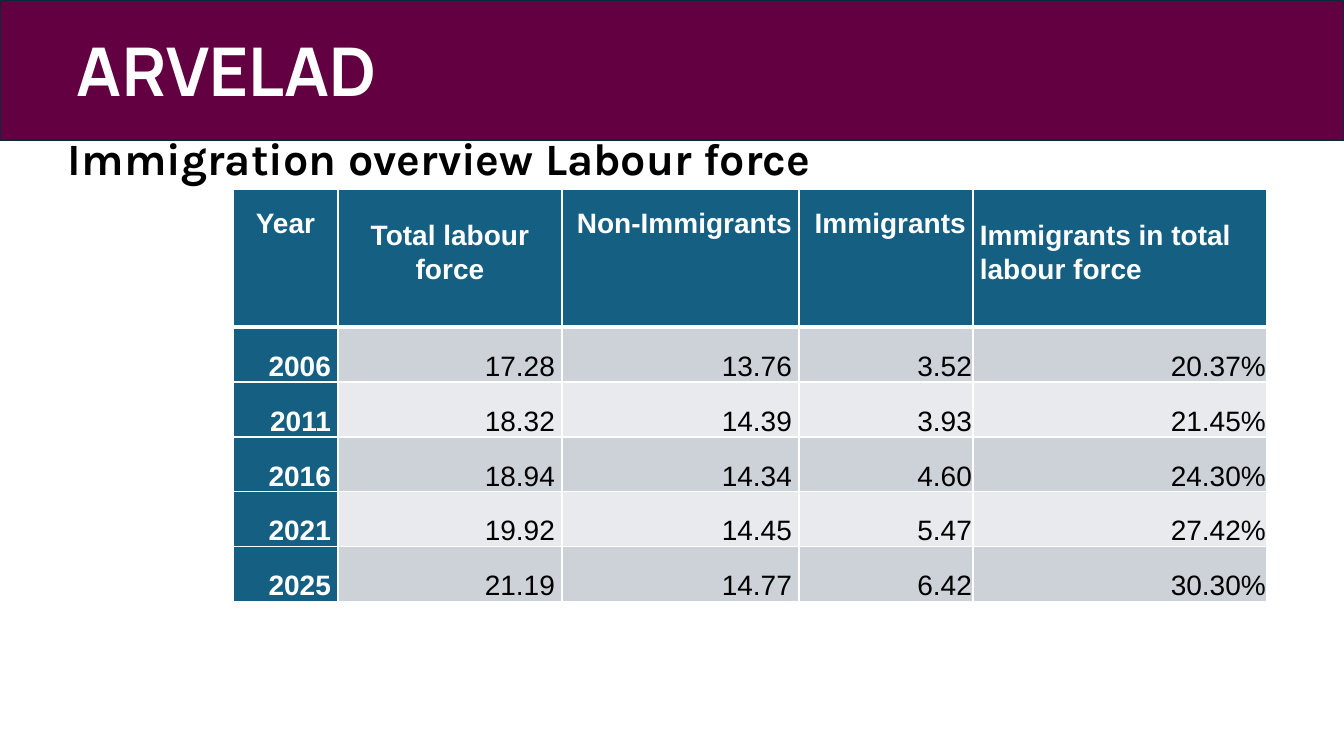
import pptx
import pptx.dml.color
import pptx.enum.shapes
import pptx.enum.text
import pptx.oxml
import pptx.oxml.ns
import pptx.util

PX = 914400 / 100.8
ANCHOR = pptx.enum.text.MSO_ANCHOR
ALIGN = pptx.enum.text.PP_ALIGN

WHITE, BLACK = "FFFFFF", "000000"
PLUM, NAVY, TEAL = "630041", "092A39", "156082"
BANDS = ("CCD2D8", "E8EAED")

COLUMN_WIDTHS = (105, 224, 237, 174, 294)
HEADER_HEIGHT, ROW_HEIGHT = 138, 55
# Label, alignment, gap below the text
HEADERS = (
    ("Year", ALIGN.CENTER, 88),
    ("Total labour force", ALIGN.CENTER, 42),
    ("Non-Immigrants", ALIGN.RIGHT, 88),
    ("Immigrants", ALIGN.RIGHT, 88),
    ("Immigrants in total labour force", ALIGN.LEFT, 42),
)
ROWS = (
    ("2006", "17.28", "13.76", "3.52", "20.37%"),
    ("2011", "18.32", "14.39", "3.93", "21.45%"),
    ("2016", "18.94", "14.34", "4.60", "24.30%"),
    ("2021", "19.92", "14.45", "5.47", "27.42%"),
    ("2025", "21.19", "14.77", "6.42", "30.30%"),
)


def px(length):
    return pptx.util.Emu(round(length * PX))


def color(value):
    return pptx.dml.color.RGBColor.from_string(value)


def format_text(paragraph, font_name, size, text_color, bold=True, align=ALIGN.LEFT):
    paragraph.alignment = align
    for run in paragraph.runs:
        run.font.name = font_name
        run.font.size = pptx.util.Pt(size)
        run.font.bold = bold
        run.font.color.rgb = color(text_color)


def add_banner(slide, left, top, width, height):
    shape = slide.shapes.add_shape(
        pptx.enum.shapes.MSO_SHAPE.RECTANGLE, px(left), px(top), px(width), px(height))
    shape.shadow.inherit = False
    shape.fill.solid()
    shape.fill.fore_color.rgb = color(PLUM)
    shape.line.color.rgb = color(NAVY)
    shape.line.width = pptx.util.Pt(1.5)
    text_frame = shape.text_frame
    text_frame.text = "ARVELAD"
    text_frame.vertical_anchor = ANCHOR.MIDDLE
    text_frame.margin_left = px(77)
    format_text(text_frame.paragraphs[0], "Manrope", 48, WHITE)


def add_title(slide, left, top, width, height):
    text_frame = slide.shapes.add_textbox(
        px(left), px(top), px(width), px(height)).text_frame
    text_frame.word_wrap = True
    text_frame.vertical_anchor = ANCHOR.MIDDLE
    text_frame.text = "Immigration overview Labour force"
    paragraph = text_frame.paragraphs[0]
    paragraph.line_spacing = 0.9
    format_text(paragraph, "Karla", 32, BLACK)


def set_borders(cell, top_width, bottom_width):
    """Draw white borders, 1 pt wide at the sides."""
    properties = cell._tc.get_or_add_tcPr()
    widths = {"L": 1, "R": 1, "T": top_width, "B": bottom_width}
    for index, (side, width) in enumerate(widths.items()):
        properties.insert(index, pptx.oxml.parse_xml(
            f'<a:ln{side} {pptx.oxml.ns.nsdecls("a")} w="{pptx.util.Pt(width)}">'
            f'<a:solidFill><a:srgbClr val="{WHITE}"/></a:solidFill></a:ln{side}>'))


def fill_cell(cell, text, fill, text_color, bold, align, gap_below=0, tight=False):
    """Write one cell; a tight cell has narrow insets and plain spacing."""
    cell.fill.solid()
    cell.fill.fore_color.rgb = color(fill)
    cell.vertical_anchor = ANCHOR.BOTTOM
    cell.margin_left = cell.margin_right = px(1 if tight else 7)
    cell.margin_top = px(1 if tight else 0)
    cell.margin_bottom = px(gap_below)
    cell.text_frame.text = text
    paragraph = cell.text_frame.paragraphs[0]
    if not tight:
        paragraph.line_spacing = 1.07
        paragraph.space_after = pptx.util.Pt(8)
    format_text(paragraph, "Arial", 20, text_color, bold, align)


def add_labour_table(slide, left, top):
    height = HEADER_HEIGHT + ROW_HEIGHT * len(ROWS)
    table = slide.shapes.add_table(
        len(ROWS) + 1, len(HEADERS), px(left), px(top),
        px(sum(COLUMN_WIDTHS)), px(height)).table
    table.first_col = True
    for column, width in zip(table.columns, COLUMN_WIDTHS):
        column.width = px(width)
    for index, row in enumerate(table.rows):
        row.height = px(ROW_HEIGHT if index else HEADER_HEIGHT)

    for column, (label, align, gap_below) in enumerate(HEADERS):
        cell = table.cell(0, column)
        set_borders(cell, 1, 3)
        fill_cell(cell, label, TEAL, WHITE, True, align, gap_below)

    for row, values in enumerate(ROWS, start=1):
        for column, value in enumerate(values):
            cell = table.cell(row, column)
            is_year = column == 0
            set_borders(cell, 3 if row == 1 else 1, 1)
            fill_cell(cell, value, TEAL if is_year else BANDS[(row - 1) % 2],
                      WHITE if is_year else BLACK, is_year, ALIGN.RIGHT,
                      tight=column >= 3)


def main():
    presentation = pptx.Presentation()
    presentation.slide_width = px(1344)
    presentation.slide_height = px(756)
    slide = presentation.slides.add_slide(presentation.slide_layouts[6])
    add_banner(slide, 0, 0, 1344, 140)
    add_title(slide, 58, 117, 1159, 88)
    add_labour_table(slide, 233, 189)
    presentation.save("out.pptx")


if __name__ == "__main__":
    main()
